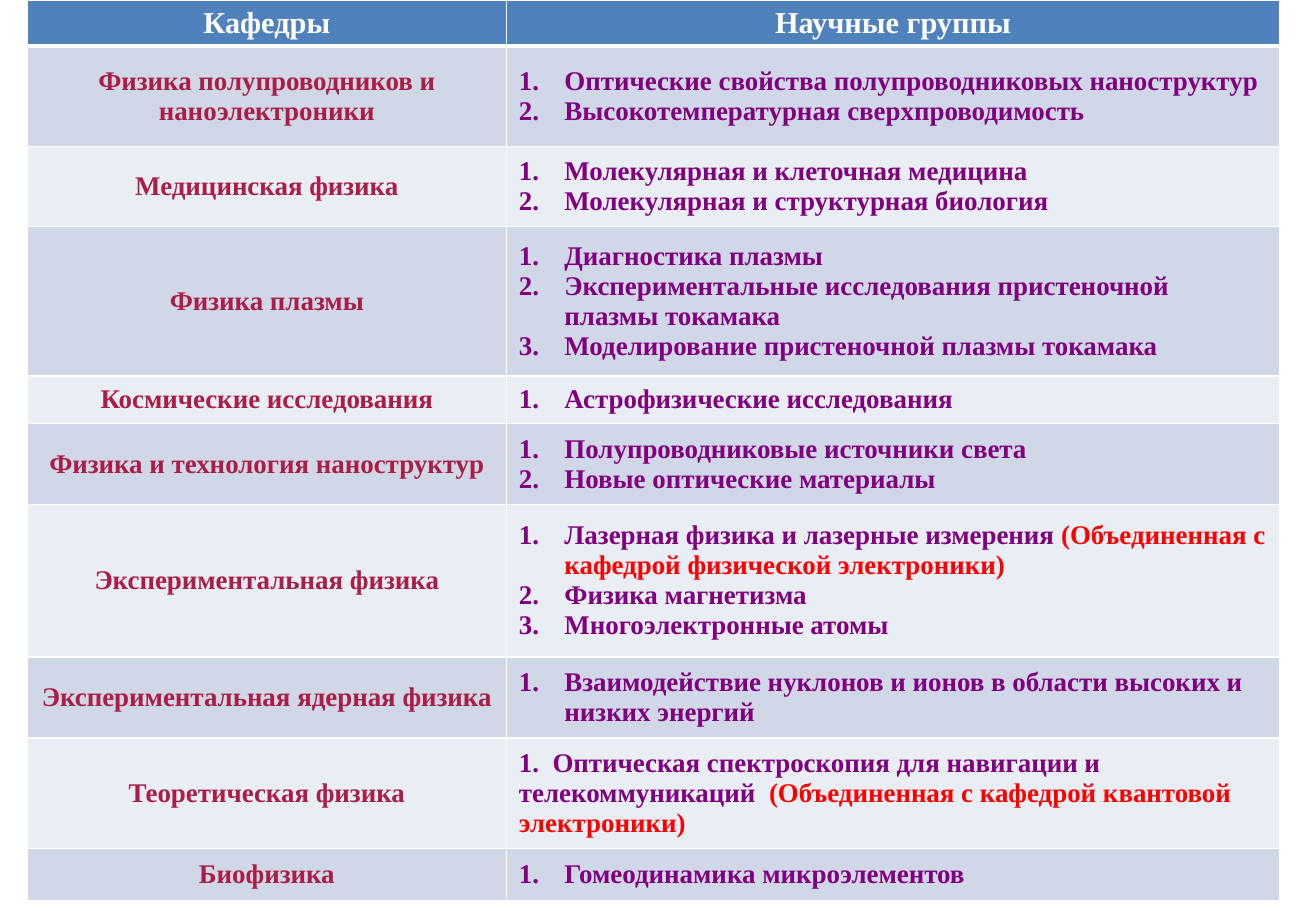
from dataclasses import dataclass

from lxml.etree import SubElement
from pptx import Presentation
from pptx.dml.color import RGBColor
from pptx.enum.text import MSO_ANCHOR, PP_ALIGN
from pptx.oxml.ns import qn
from pptx.util import Pt


@dataclass(frozen=True)
class Theme:
    font: str = "Times New Roman"
    head_size: int = 18
    body_size: int = 16
    white: str = "FFFFFF"
    head: str = "4F81BD"
    bands: tuple = ("D0D8E8", "E9EDF4")
    chair: str = "AB1D46"
    group: str = "800080"
    note: str = "FF0000"


THEME = Theme()
LEFT = 16
WIDTHS = (284.4, 457.9)
INDENT = 27
HEAD = ("Кафедры", "Научные группы")
HEAD_HIGH = 26

# Row height, department, then its groups; a pair is a group with a red note.
ROWS = [
    (59.8, "Физика полупроводников и наноэлектроники",
     ["Оптические свойства полупроводниковых наноструктур",
      "Высокотемпературная сверхпроводимость"]),
    (47.5, "Медицинская физика",
     ["Молекулярная и клеточная медицина",
      "Молекулярная и структурная биология"]),
    (88.6, "Физика плазмы",
     ["Диагностика плазмы",
      "Экспериментальные исследования пристеночной плазмы токамака",
      "Моделирование пристеночной плазмы токамака"]),
    (28, "Космические исследования", ["Астрофизические исследования"]),
    (48.2, "Физика и технология наноструктур",
     ["Полупроводниковые источники света", "Новые оптические материалы"]),
    (90.2, "Экспериментальная физика",
     [("Лазерная физика и лазерные измерения ",
       "(Объединенная с кафедрой физической электроники)"),
      "Физика магнетизма", "Многоэлектронные атомы"]),
    (48.2, "Экспериментальная ядерная физика",
     ["Взаимодействие нуклонов и ионов в области высоких и низких энергий"]),
    (65.4, "Теоретическая физика",
     [("1.  Оптическая спектроскопия для навигации и телекоммуникаций  ",
       "(Объединенная с кафедрой квантовой электроники)")]),
    (31, "Биофизика", ["Гомеодинамика микроэлементов"]),
]


def style(run, size, color):
    font = run.font
    font.name, font.size, font.bold = THEME.font, Pt(size), True
    font.color.rgb = RGBColor.from_string(color)


def border(cell, row):
    """Draw white edges, with a thick one between the header and the body."""
    thick = {"T": 1, "B": 0}
    props = cell._tc.get_or_add_tcPr()
    for side in "LRTB":
        width = 3 if thick.get(side) == row else 1
        line = SubElement(props, qn(f"a:ln{side}"), w=str(Pt(width)))
        fill = SubElement(line, qn("a:solidFill"))
        SubElement(fill, qn("a:srgbClr"), val=THEME.white)


def paint(cell, row, color):
    border(cell, row)
    cell.fill.solid()
    cell.fill.fore_color.rgb = RGBColor.from_string(color)


def center(cell, text, size, color):
    para = cell.text_frame.paragraphs[0]
    para.text = text
    para.alignment = PP_ALIGN.CENTER
    style(para.runs[0], size, color)


def number(para):
    props = para._p.get_or_add_pPr()
    props.set("marL", str(Pt(INDENT)))
    props.set("indent", str(-Pt(INDENT)))
    SubElement(props, qn("a:buFont"), typeface="+mj-lt")
    SubElement(props, qn("a:buAutoNum"), type="arabicPeriod")


def fill_groups(cell, groups):
    frame = cell.text_frame
    for pos, group in enumerate(groups):
        para = frame.add_paragraph() if pos else frame.paragraphs[0]
        parts = (group,) if isinstance(group, str) else group
        for text, color in zip(parts, (THEME.group, THEME.note)):
            run = para.add_run()
            run.text = text
            style(run, THEME.body_size, color)
        if not parts[0].startswith("1."):
            number(para)


def add_grid(slide):
    highs = [HEAD_HIGH] + [high for high, _, _ in ROWS]
    table = slide.shapes.add_table(
        len(highs), len(WIDTHS), Pt(LEFT), 0, Pt(sum(WIDTHS)), Pt(sum(highs))
    ).table
    for col, width in zip(table.columns, WIDTHS):
        col.width = Pt(width)
    for row, high in zip(table.rows, highs):
        row.height = Pt(high)
    return table


def main():
    deck = Presentation()
    deck.slide_width, deck.slide_height = Pt(780), Pt(540)
    table = add_grid(deck.slides.add_slide(deck.slide_layouts[6]))
    for col, text in enumerate(HEAD):
        cell = table.cell(0, col)
        paint(cell, 0, THEME.head)
        center(cell, text, THEME.head_size, THEME.white)
    for row, (_, chair, groups) in enumerate(ROWS, 1):
        left, right = table.cell(row, 0), table.cell(row, 1)
        for cell in (left, right):
            paint(cell, row, THEME.bands[(row - 1) % 2])
            cell.vertical_anchor = MSO_ANCHOR.MIDDLE
        center(left, chair, THEME.body_size, THEME.chair)
        fill_groups(right, groups)
    deck.save("out.pptx")


if __name__ == "__main__":
    main()
